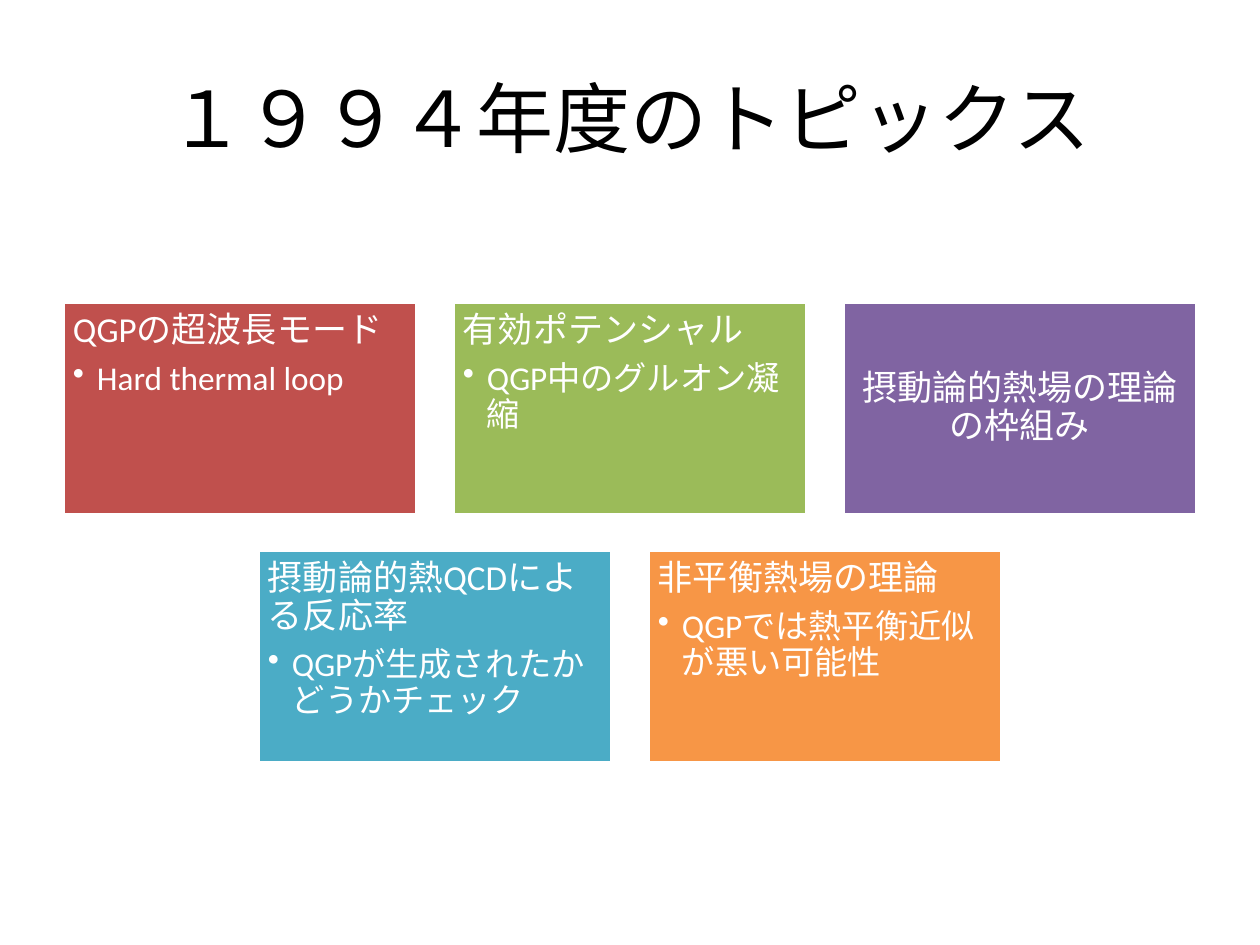
"""Build the slide of 1994 topics as a centred grid of coloured cards."""
from dataclasses import dataclass
from typing import Any

from lxml import etree
from pptx import Presentation
from pptx import util as u
from pptx.dml.color import RGBColor
from pptx.enum import shapes, text
from pptx.oxml.ns import qn

BLACK = RGBColor(0x00, 0x00, 0x00)
WHITE = RGBColor(0xFF, 0xFF, 0xFF)
RED = RGBColor(0xC0, 0x50, 0x4D)
GREEN = RGBColor(0x9B, 0xBB, 0x59)
PURPLE = RGBColor(0x80, 0x64, 0xA2)
TEAL = RGBColor(0x4B, 0xAC, 0xC6)
ORANGE = RGBColor(0xF7, 0x96, 0x46)

PAGE_WIDTH, PAGE_HEIGHT = 1260, 945
CARD_WIDTH, CARD_HEIGHT = 354, 213
COLUMN_STEP, ROW_STEP = 390, 248
GRID_TOP = 302

ROWS = [
    [
        (RED, "QGPの超波長モード", "Hard thermal loop"),
        (GREEN, "有効ポテンシャル", "QGP中のグルオン凝縮"),
        (PURPLE, "摂動論的熱場の理論の枠組み", None),
    ],
    [
        (TEAL, "摂動論的熱QCDによる反応率", "QGPが生成されたかどうかチェック"),
        (ORANGE, "非平衡熱場の理論", "QGPでは熱平衡近似が悪い可能性"),
    ],
]


def px(length):
    return u.Emu(round(length * 914400 / 126))


@dataclass
class Painter:
    """Draw styled elements on the current page."""

    page: Any
    font_name: str = "Calibri"
    inset: int = 10
    indent: int = 24

    def style(self, para, size, color, align):
        para.alignment = align
        para.font.name = self.font_name
        para.font.size = u.Pt(size)
        para.font.color.rgb = color

    def title(self, words, left, top, width, height):
        box = self.page.shapes.title
        box.left, box.top, box.width, box.height = map(px, (left, top, width, height))
        box.text_frame.text = words
        box.text_frame.vertical_anchor = text.MSO_ANCHOR.MIDDLE
        self.style(box.text_frame.paragraphs[0], 44, BLACK, text.PP_ALIGN.CENTER)

    def bullet(self, para):
        properties = para._p.get_or_add_pPr()
        properties.set("marL", str(px(self.indent)))
        properties.set("indent", str(-px(self.indent)))
        etree.SubElement(properties, qn("a:buChar")).set("char", "•")

    def card(self, left, top, color, heading, detail):
        box = self.page.shapes.add_shape(
            shapes.MSO_SHAPE.RECTANGLE, *map(px, (left, top, CARD_WIDTH, CARD_HEIGHT))
        )
        box.shadow.inherit = False
        box.fill.solid()
        box.fill.fore_color.rgb = color
        box.line.color.rgb = WHITE
        box.line.width = u.Pt(2)
        frame = box.text_frame
        frame.word_wrap = True
        frame.margin_left = frame.margin_right = px(self.inset)
        frame.margin_top = frame.margin_bottom = px(self.inset)
        frame.vertical_anchor = text.MSO_ANCHOR.TOP if detail else text.MSO_ANCHOR.MIDDLE
        para = frame.paragraphs[0]
        para.text = heading
        para.line_spacing = 0.9
        para.space_after = u.Pt(7)
        self.style(para, 20, WHITE, text.PP_ALIGN.LEFT if detail else text.PP_ALIGN.CENTER)
        if detail:
            para = frame.add_paragraph()
            para.text = detail
            para.level = 1
            self.bullet(para)
            para.line_spacing = 0.9
            self.style(para, 19, WHITE, text.PP_ALIGN.LEFT)


def main():
    deck = Presentation()
    deck.slide_width, deck.slide_height = px(PAGE_WIDTH), px(PAGE_HEIGHT)
    painter = Painter(deck.slides.add_slide(deck.slide_layouts[5]))
    painter.title("１９９４年度のトピックス", 63, 38, 1134, 158)
    for row, cards in enumerate(ROWS):
        row_width = (len(cards) - 1) * COLUMN_STEP + CARD_WIDTH
        row_left = (PAGE_WIDTH - row_width) // 2
        for column, card in enumerate(cards):
            painter.card(row_left + column * COLUMN_STEP, GRID_TOP + row * ROW_STEP, *card)
    deck.save("out.pptx")


if __name__ == "__main__":
    main()
